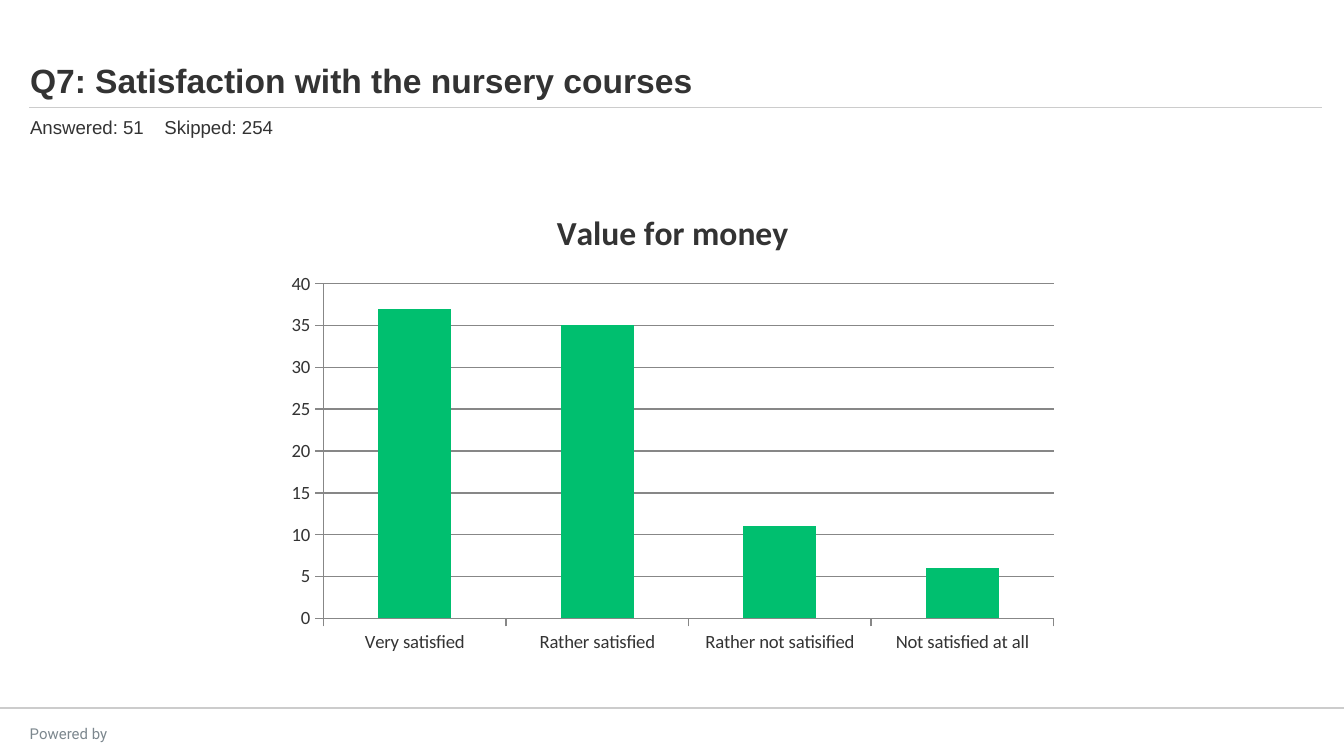
from dataclasses import dataclass

from lxml import etree
from pptx import Presentation
from pptx import util as u
from pptx.chart import data as cd
from pptx.dml.color import RGBColor
from pptx.enum import chart as ce, shapes, text
from pptx.oxml.ns import qn

PX = 9525
W, H = 960, 540


@dataclass(frozen=True)
class Theme:
    ink: str = "333333"
    muted: str = "7C878E"
    rule: str = "CCCCCC"
    axis: str = "878787"
    bar: str = "00BF6F"
    body_font: str = "Arial"
    chart_font: str = "Calibri"
    footer_font: str = "Roboto"
    heading: int = 18
    body: int = 10
    footer: int = 8


T = Theme()


def px(*lengths):
    return [u.Emu(n * PX) for n in lengths]


def set_font(f, name, size, color=T.ink, bold=False):
    f.name, f.size, f.bold = name, u.Pt(size), bold
    f.color.rgb = RGBColor.from_string(color)


def set_line(line, color, width):
    line.color.rgb = RGBColor.from_string(color)
    line.width = u.Pt(width)


def add_text(s, box, words, font, size, color=T.ink, bold=False,
             align=text.PP_ALIGN.LEFT, anchor=text.MSO_ANCHOR.TOP, tab=None):
    tf = s.shapes.add_textbox(*px(*box)).text_frame
    tf.word_wrap = True
    tf.vertical_anchor = anchor
    p = tf.paragraphs[0]
    p.alignment = align
    if tab:
        tabs = etree.SubElement(p._p.get_or_add_pPr(), qn("a:tabLst"))
        etree.SubElement(tabs, qn("a:tab"), pos=str(tab * PX), algn="l")
    r = p.add_run()
    r.text = words
    set_font(r.font, font, size, color, bold)


def add_rule(s, x, y, w, width):
    sp = s.shapes.add_connector(shapes.MSO_CONNECTOR.STRAIGHT, *px(x, y, x + w, y))
    set_line(sp.line, T.rule, width)
    etree.SubElement(sp._element.spPr, qn("a:effectLst"))


def header(s, x, y, w, title, counts):
    add_text(s, (x, y, 864, 41), title, T.body_font, T.heading, bold=True,
             anchor=text.MSO_ANCHOR.BOTTOM)
    add_rule(s, x + 9, y + 42, w - 9, 0.5)
    add_text(s, (x, y + 43, 560, 26), "\t".join(counts), T.body_font, T.body, tab=96)


def column_chart(s, x, y, w, h, title, values):
    data = cd.CategoryChartData()
    data.categories = list(values)
    data.add_series("Series 1", list(values.values()))
    ch = s.shapes.add_chart(ce.XL_CHART_TYPE.COLUMN_CLUSTERED, *px(x, y, w, h), data).chart
    set_font(ch.font, T.chart_font, T.body)
    ch.has_legend = False
    ch.has_title = True
    tf = ch.chart_title.text_frame
    tf.text = title
    set_font(tf.paragraphs[0].runs[0].font, T.chart_font, T.heading, bold=True)

    plot = ch.plots[0]
    plot.gap_width = 150
    plot.vary_by_categories = False
    fill = plot.series[0].format.fill
    fill.solid()
    fill.fore_color.rgb = RGBColor.from_string(T.bar)

    for axis in (ch.category_axis, ch.value_axis):
        axis.major_tick_mark = ce.XL_TICK_MARK.OUTSIDE
        axis.minor_tick_mark = ce.XL_TICK_MARK.NONE
        set_line(axis.format.line, T.axis, 0.75)
    va = ch.value_axis
    va.minimum_scale, va.maximum_scale, va.major_unit = 0, 40, 5
    va.has_major_gridlines = True
    set_line(va.major_gridlines.format.line, T.axis, 0.75)


def footer(s, x, y, w, words):
    add_rule(s, x, y, w, 1)
    add_text(s, (x - 6, y + 7, 110, 17), words, T.footer_font, T.footer, T.muted,
             align=text.PP_ALIGN.CENTER)


def main():
    prs = Presentation()
    prs.slide_width, prs.slide_height = px(W, H)
    s = prs.slides.add_slide(prs.slide_layouts[6])
    footer(s, 0, 506, W, "Powered by")
    header(s, 12, 35, 932, "Q7: Satisfaction with the nursery courses",
           ("Answered: 51", "Skipped: 254"))
    column_chart(s, 197, 133, 567, 340, "Value for money", {
        "Very satisfied": 37,
        "Rather satisfied": 35,
        "Rather not satisified": 11,
        "Not satisfied at all": 6,
    })
    prs.save("out.pptx")


if __name__ == "__main__":
    main()
